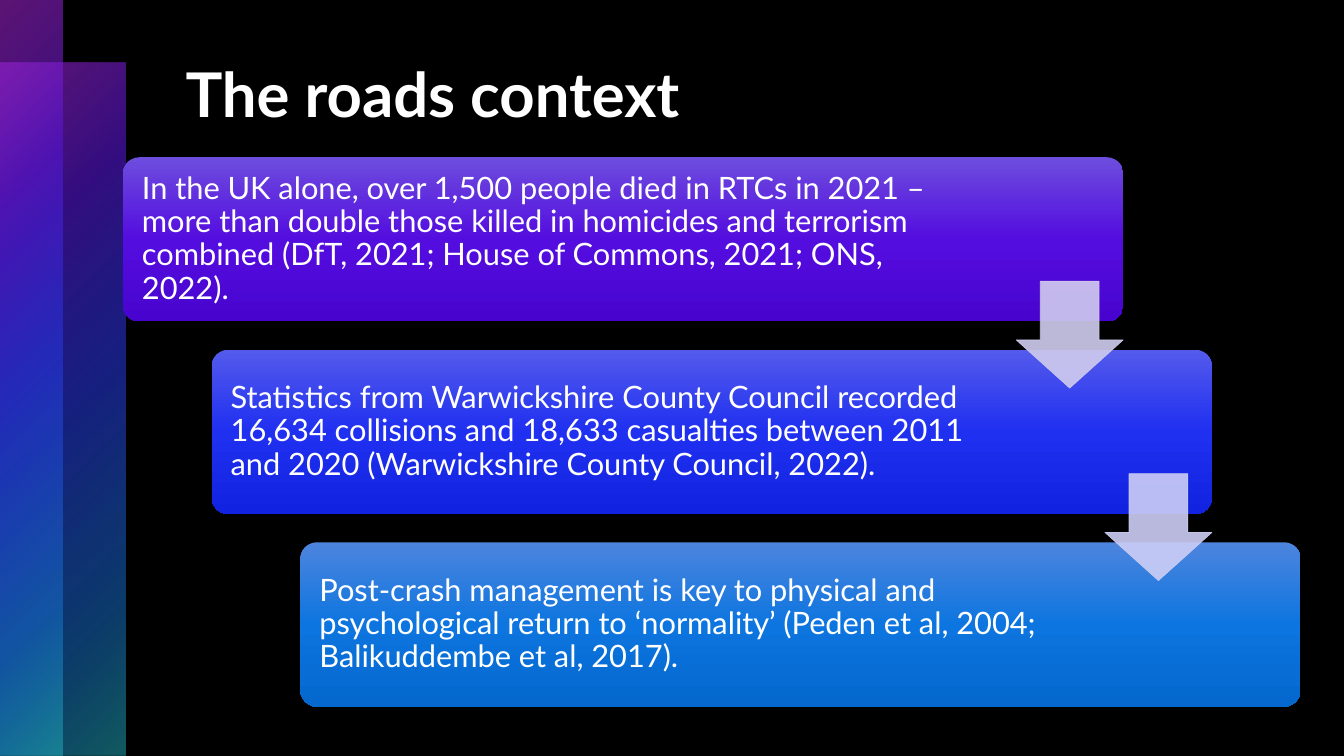
import pptx
import pptx.util
import pptx.dml.color
import pptx.enum.shapes
import pptx.enum.text
import pptx.oxml
import pptx.oxml.ns

Inches = pptx.util.Inches
RGBColor = pptx.dml.color.RGBColor
Shape = pptx.enum.shapes.MSO_SHAPE
Anchor = pptx.enum.text.MSO_ANCHOR
Align = pptx.enum.text.PP_ALIGN
qn = pptx.oxml.ns.qn

BLACK = RGBColor(0x00, 0x00, 0x00)
WHITE = RGBColor(0xFF, 0xFF, 0xFF)
PURPLE = RGBColor(0xB8, 0x29, 0xE7)
VIOLET = RGBColor(0x57, 0x17, 0xD5)
INDIGO = RGBColor(0x29, 0x38, 0xE7)
BLUE = RGBColor(0x17, 0x75, 0xD5)
TEAL = RGBColor(0x22, 0xB4, 0xC2)
LILAC = RGBColor(0xD1, 0xCC, 0xEF)
MIST = RGBColor(0xCD, 0xCE, 0xF6)

# Each stop is position, colour and opacity, in percent
CARDS = [
    ("In the UK alone, over 1,500 people died in RTCs in 2021 – more than double "
     "those killed in homicides and terrorism combined (DfT, 2021; House of "
     "Commons, 2021; ONS, 2022).", 1.81,
     [(0, RGBColor(0x6D, 0x4D, 0xDE), 100), (50, RGBColor(0x54, 0x0D, 0xDF), 100),
      (100, RGBColor(0x48, 0x04, 0xCE), 100)]),
    ("Statistics from Warwickshire County Council recorded 16,634 collisions and "
     "18,633 casualties between 2011 and 2020 (Warwickshire County Council, 2022).",
     2.08,
     [(0, RGBColor(0x53, 0x5A, 0xEC), 100), (50, RGBColor(0x20, 0x30, 0xF0), 100),
      (100, RGBColor(0x11, 0x22, 0xE0), 100)]),
    ("Post-crash management is key to physical and psychological return to "
     "‘normality’ (Peden et al, 2004; Balikuddembe et al, 2017).", 2.08,
     [(0, RGBColor(0x4D, 0x85, 0xDE), 100), (50, RGBColor(0x0D, 0x75, 0xDF), 100),
      (100, RGBColor(0x04, 0x68, 0xCE), 100)]),
]
STEP_X, STEP_Y = 0.88, 1.91
DOWN = '<a:lin ang="5400000" scaled="0"/>'
RADIAL = '<a:path path="circle"><a:fillToRect r="100000" b="100000"/></a:path>'


def write(frame, text, size, font="Lato", color=WHITE, bold=False, space=1.0):
    para = frame.paragraphs[0]
    para.alignment = Align.LEFT
    para.line_spacing = space
    run = para.add_run()
    run.text = text
    run.font.size = pptx.util.Pt(size)
    run.font.name = font
    run.font.color.rgb = color
    run.font.bold = bold


def blend(shape, stops, course):
    """Fill the shape with a gradient of any number of stops."""
    marks = "".join(
        f'<a:gs pos="{pos * 1000}"><a:srgbClr val="{color}">'
        f'<a:alpha val="{alpha * 1000}"/></a:srgbClr></a:gs>'
        for pos, color, alpha in stops)
    grad = pptx.oxml.parse_xml(
        f'<a:gradFill {pptx.oxml.ns.nsdecls("a")} rotWithShape="1">'
        f'<a:gsLst>{marks}</a:gsLst>{course}</a:gradFill>')
    shape.fill.background()
    props = shape.element.spPr
    props.replace(props.find(qn("a:noFill")), grad)


def fade(shape, percent):
    """Set the opacity of the shape's solid fill and line."""
    for color in shape.element.spPr.iter(qn("a:srgbClr")):
        alpha = color.makeelement(qn("a:alpha"), {"val": str(percent * 1000)})
        color.append(alpha)


class Deck:
    """Holds the presentation, its style and the current slide."""

    def __init__(self):
        self.show = pptx.Presentation()
        self.show.slide_width = Inches(13.33)
        self.show.slide_height = Inches(7.5)
        self.slide = self.show.slides.add_slide(self.show.slide_layouts[5])
        fill = self.slide.background.fill
        fill.solid()
        fill.fore_color.rgb = BLACK

    def shape(self, kind, left, top, width, height):
        item = self.slide.shapes.add_shape(
            kind, Inches(left), Inches(top), Inches(width), Inches(height))
        item.shadow.inherit = False
        item.line.fill.background()
        return item

    def band(self, top, width, middle):
        item = self.shape(Shape.RECTANGLE, 0, top, width, 7.5 - top)
        blend(item, [(0, PURPLE, 50), (25, VIOLET, 60), (middle, INDIGO, 55),
                     (81, BLUE, 50), (99, TEAL, 50)], RADIAL)

    def title(self, text):
        item = self.slide.shapes.title
        item.left, item.top = Inches(1.74), Inches(0.5)
        item.width, item.height = Inches(10.37), Inches(1.7)
        item.text_frame.vertical_anchor = Anchor.TOP
        write(item.text_frame, text, 44, bold=True)

    def card(self, row, text, right, stops):
        item = self.shape(Shape.ROUNDED_RECTANGLE, 1.22 + row * STEP_X,
                          1.56 + row * STEP_Y, 9.92, 1.63)
        item.adjustments[0] = 0.1
        blend(item, stops, DOWN)
        frame = item.text_frame
        frame.word_wrap = True
        frame.vertical_anchor = Anchor.MIDDLE
        frame.margin_left, frame.margin_right = Inches(0.14), Inches(right)
        frame.margin_top = frame.margin_bottom = Inches(0.09)
        write(frame, text, 22, space=0.9)

    def arrow(self, row, color):
        item = self.shape(Shape.DOWN_ARROW, 10.08 + row * STEP_X,
                          2.79 + row * STEP_Y, 1.06, 1.06)
        item.adjustments[0], item.adjustments[1] = 0.55, 0.45
        item.fill.solid()
        item.fill.fore_color.rgb = color
        item.line.color.rgb = color
        item.line.width = pptx.util.Pt(0.5)
        fade(item, 90)


def main():
    deck = Deck()
    deck.band(0.62, 1.24, 50)
    deck.band(0, 0.62, 49)
    deck.title("The roads context")
    for row, (text, right, stops) in enumerate(CARDS):
        deck.card(row, text, right, stops)
    for row, color in enumerate((LILAC, MIST)):
        deck.arrow(row, color)
    deck.show.save("out.pptx")


if __name__ == "__main__":
    main()
